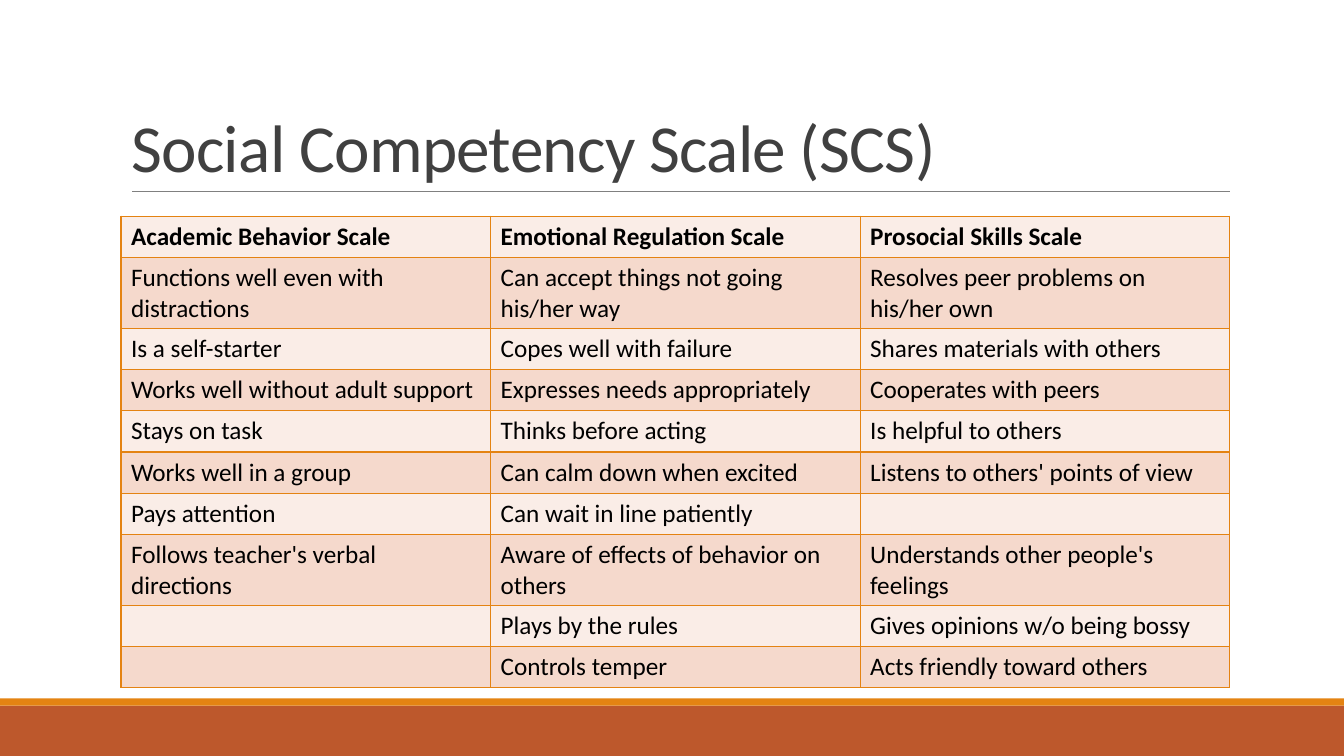
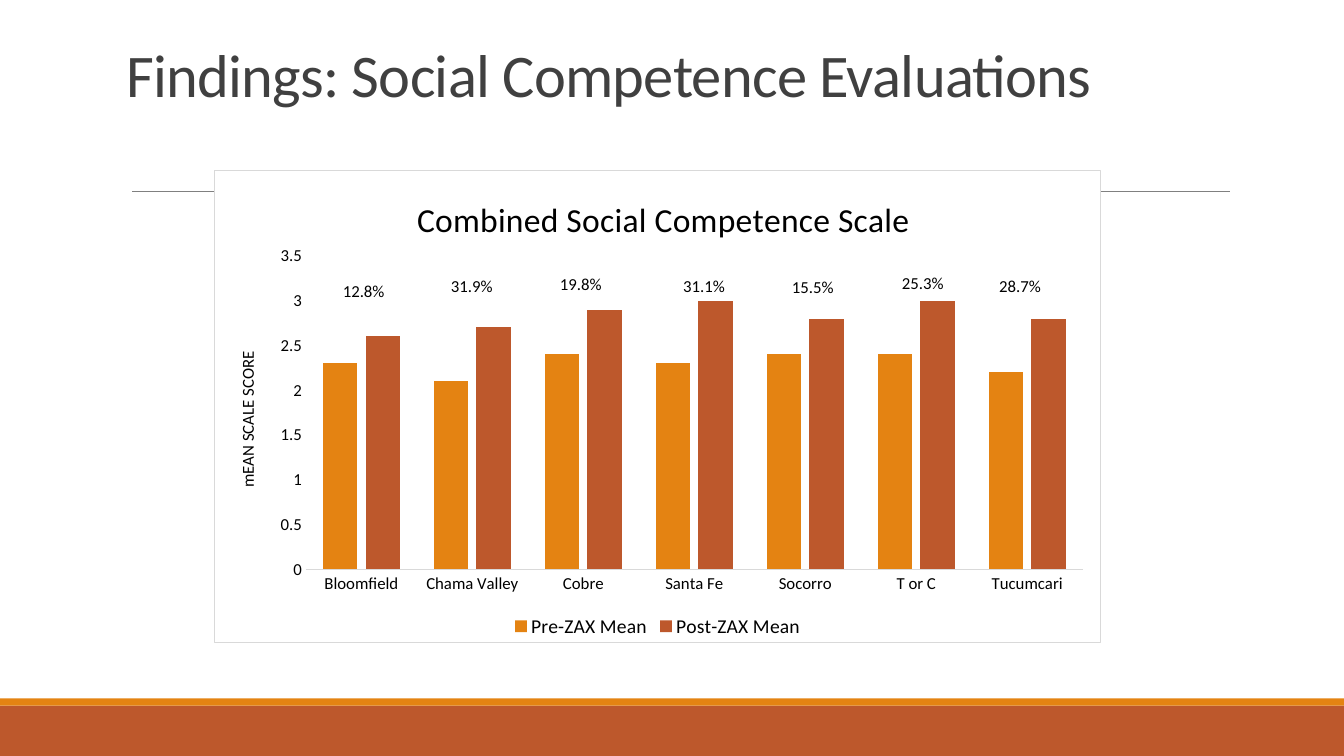
from lxml import etree
from pptx import Presentation
from pptx.chart.data import CategoryChartData
from pptx.dml.color import RGBColor
from pptx.enum import chart as ch, shapes, text
from pptx.oxml import parse_xml
from pptx.oxml.ns import qn
from pptx.util import Cm, Pt

FONT = "Calibri"
RUST = RGBColor(0xBD, 0x58, 0x2C)
ORANGE = RGBColor(0xE4, 0x83, 0x12)
RULE_GRAY = RGBColor(0x80, 0x80, 0x80)
TITLE_GRAY = RGBColor(0x40, 0x40, 0x40)
BLACK = RGBColor(0, 0, 0)
FRAME_GRAY = RGBColor(0xD9, 0xD9, 0xD9)
WHITE = RGBColor(0xFF, 0xFF, 0xFF)
ROW_TINTS = RGBColor(0xFA, 0xED, 0xE7), RGBColor(0xF5, 0xD9, 0xCC)

SLIDE_W, SLIDE_H = Cm(33.87), Cm(19.05)
BANDS = [(Cm(17.78), Cm(1.27), RUST), (Cm(17.6), Cm(0.18), ORANGE)]
NS = " ".join(f'xmlns:{prefix}="http://schemas.openxmlformats.org/drawingml/2006/{part}"'
              for prefix, part in (("a", "main"), ("c", "chart")))

SCALE_ROWS = [
    ("Academic Behavior Scale", "Emotional Regulation Scale", "Prosocial Skills Scale"),
    ("Functions well even with distractions", "Can accept things not going his/her way",
     "Resolves peer problems on his/her own"),
    ("Is a self-starter", "Copes well with failure", "Shares materials with others"),
    ("Works well without adult support", "Expresses needs appropriately", "Cooperates with peers"),
    ("Stays on task", "Thinks before acting", "Is helpful to others"),
    ("Works well in a group", "Can calm down when excited", "Listens to others' points of view"),
    ("Pays attention", "Can wait in line patiently", ""),
    ("Follows teacher's verbal directions", "Aware of effects of behavior on others",
     "Understands other people's feelings"),
    ("", "Plays by the rules", "Gives opinions w/o being bossy"),
    ("", "Controls temper", "Acts friendly toward others"),
]

# district, mean before, mean after, gain, gain label shift in cm (right, down)
FINDINGS = [
    ("Bloomfield", 2.3, 2.6, "12.8%", (-0.48, -0.79)),
    ("Chama Valley", 2.1, 2.7, "31.9%", (-0.55, -0.67)),
    ("Cobre", 2.4, 2.9, "19.8%", (-0.6, -0.28)),
    ("Santa Fe", 2.3, 3.0, "31.1%", (-0.29, 0.01)),
    ("Socorro", 2.4, 2.8, "15.5%", (-0.35, -0.43)),
    ("T or C", 2.4, 3.0, "25.3%", (-0.37, -0.08)),
    ("Tucumcari", 2.2, 2.8, "28.7%", (-0.72, -0.46)),
]
CHART_W, CHART_H = 22.35, 11.91


def set_format(target, values):
    for name, value in values.items():
        setattr(target, name, value)


def set_font(font, size, color=BLACK, bold=False):
    set_format(font, {"name": FONT, "size": Pt(size), "bold": bold})
    font.color.rgb = color


def add_rule(slide):
    rule = slide.shapes.add_connector(shapes.MSO_CONNECTOR.STRAIGHT,
                                      Cm(3.33), Cm(4.82), Cm(31), Cm(4.82))
    rule.line.color.rgb = RULE_GRAY
    rule.line.width = Pt(0.5)
    etree.SubElement(rule._element.spPr, qn("a:effectLst"))


def add_title(slide, wording, left, top, height, size):
    frame = slide.shapes.add_textbox(left, top, Cm(27.94), height).text_frame
    set_format(frame, {"word_wrap": True, "vertical_anchor": text.MSO_ANCHOR.BOTTOM})
    heading = frame.paragraphs[0]
    heading.line_spacing = 0.85
    run = heading.add_run()
    run.text = wording
    set_font(run.font, size, TITLE_GRAY)
    run.font._element.set("spc", "-50")


def add_base_slide(deck):
    """Add a blank slide with the bottom bands and the rule under the title."""
    slide = deck.slides.add_slide(deck.slide_layouts[6])
    for top, height, color in BANDS:
        band = slide.shapes.add_shape(shapes.MSO_SHAPE.RECTANGLE, 0, top, SLIDE_W, height)
        band.shadow.inherit = False
        band.fill.solid()
        band.fill.fore_color.rgb = color
        band.line.fill.background()
    add_rule(slide)
    return slide


def add_cell_borders(cell):
    properties = cell._tc.get_or_add_tcPr()
    for side in "LRTB":
        properties.append(parse_xml(
            f'<a:ln{side} {NS} w="{Pt(1)}"><a:solidFill><a:srgbClr val="{ORANGE}"/>'
            f'</a:solidFill></a:ln{side}>'))


def add_scale_table(slide):
    row_height = Cm(1.04)
    table = slide.shapes.add_table(len(SCALE_ROWS), len(SCALE_ROWS[0]), Cm(3.05), Cm(5.45),
                                   Cm(27.94), row_height * len(SCALE_ROWS)).table
    set_format(table, {"first_row": False, "horz_banding": False})
    for r, items in enumerate(SCALE_ROWS):
        for c, item in enumerate(items):
            cell = table.cell(r, c)
            add_cell_borders(cell)
            cell.fill.solid()
            cell.fill.fore_color.rgb = ROW_TINTS[r % 2]
            cell.text = item
            set_font(cell.text_frame.paragraphs[0].font, 18, bold=r == 0)


def manual_layout(lengths, **modes):
    """Build a chart layout from lengths in cm, stored as shares of the chart."""
    sides = {"x": CHART_W, "y": CHART_H, "w": CHART_W, "h": CHART_H}
    settings = modes | {name: length / sides[name] for name, length in lengths.items()}
    entries = "".join(f'<c:{name} val="{value}"/>' for name, value in settings.items())
    return parse_xml(f"<c:layout {NS}><c:manualLayout>{entries}</c:manualLayout></c:layout>")


def replace_layout(parent, position, layout):
    for old in parent.findall(qn("c:layout")):
        parent.remove(old)
    parent.insert(position, layout)


def set_chart_text(owner, wording, size):
    frame = owner.text_frame
    frame.text = wording
    set_font(frame.paragraphs[0].runs[0].font, size)


def add_chart_title(chart):
    title = chart.chart_title
    set_chart_text(title, "Combined Social Competence Scale", 24)
    title.text_frame.paragraphs[0].runs[0].font._element.set("spc", "20")
    title.include_in_layout = False
    replace_layout(title._element, 1, manual_layout({"x": 4.95, "y": 0.5},
                                                    xMode="edge", yMode="edge"))


def style_axes(chart):
    districts, scores = chart.category_axis, chart.value_axis
    for axis in (districts, scores):
        set_format(axis, {"major_tick_mark": ch.XL_TICK_MARK.NONE,
                          "minor_tick_mark": ch.XL_TICK_MARK.NONE,
                          "has_major_gridlines": False})
        set_font(axis.tick_labels.font, 12)
    districts.format.line.color.rgb = FRAME_GRAY
    districts.format.line.width = Pt(0.75)
    scores.format.line.fill.background()
    set_format(scores, {"minimum_scale": 0, "maximum_scale": 3.5, "major_unit": 0.5})
    set_format(scores.tick_labels, {"number_format": "General",
                                    "number_format_is_linked": False})
    set_chart_text(scores.axis_title, "mEAN SCALE SCORE", 12)


def add_gain_labels(series):
    for i, (*_, gain, _shift) in enumerate(FINDINGS):
        label = series.points[i].data_label
        set_chart_text(label, gain, 12)
        label.position = ch.XL_LABEL_POSITION.OUTSIDE_END
    for label_xml, finding in zip(series._element.iter(qn("c:dLbl")), FINDINGS):
        right, down = finding[-1]
        replace_layout(label_xml, 1, manual_layout({"x": right, "y": down}))
    for leader_lines in series._element.iter(qn("c:showLeaderLines")):
        leader_lines.set("val", "0")


def frame_chart(chart):
    """Give the whole chart its fill and border, and place the plot area."""
    chart_xml = chart._chartSpace.find(qn("c:chart"))
    chart_xml.addnext(parse_xml(
        f'<c:spPr {NS}><a:solidFill><a:srgbClr val="{WHITE}"/></a:solidFill>'
        f'<a:ln w="{Pt(0.75)}"><a:solidFill><a:srgbClr val="{FRAME_GRAY}"/></a:solidFill>'
        f'</a:ln></c:spPr>'))
    replace_layout(chart_xml.find(qn("c:plotArea")), 0,
                   manual_layout({"x": 2.3, "y": 2.15, "w": 19.6, "h": 7.92},
                                 layoutTarget="inner", xMode="edge", yMode="edge"))


def add_findings_chart(slide):
    districts, before, after, *_ = zip(*FINDINGS)
    data = CategoryChartData()
    data.categories = districts
    data.add_series("Pre-ZAX Mean", before)
    data.add_series("Post-ZAX Mean", after)
    chart = slide.shapes.add_chart(ch.XL_CHART_TYPE.COLUMN_CLUSTERED, Cm(5.4), Cm(4.29),
                                   Cm(CHART_W), Cm(CHART_H), data).chart
    set_font(chart.font, 10)
    add_chart_title(chart)
    chart.has_legend = True
    set_format(chart.legend, {"position": ch.XL_LEGEND_POSITION.BOTTOM,
                              "include_in_layout": False})
    set_font(chart.legend.font, 14)
    style_axes(chart)
    plot = chart.plots[0]
    set_format(plot, {"gap_width": 100, "overlap": -24, "vary_by_categories": False})
    for series, color in zip(plot.series, (ORANGE, RUST)):
        series.format.fill.solid()
        series.format.fill.fore_color.rgb = color
    add_gain_labels(plot.series[1])
    frame_chart(chart)


def main():
    deck = Presentation()
    set_format(deck, {"slide_width": SLIDE_W, "slide_height": SLIDE_H})

    scale = add_base_slide(deck)
    add_title(scale, "Social Competency Scale (SCS)", Cm(3.06), Cm(0.79), Cm(4.04), 48)
    add_scale_table(scale)

    findings = add_base_slide(deck)
    add_title(findings, "Findings: Social Competence Evaluations",
              Cm(2.93), Cm(1.09), Cm(1.8), 43.2)
    add_findings_chart(findings)

    deck.save("out.pptx")


if __name__ == "__main__":
    main()
